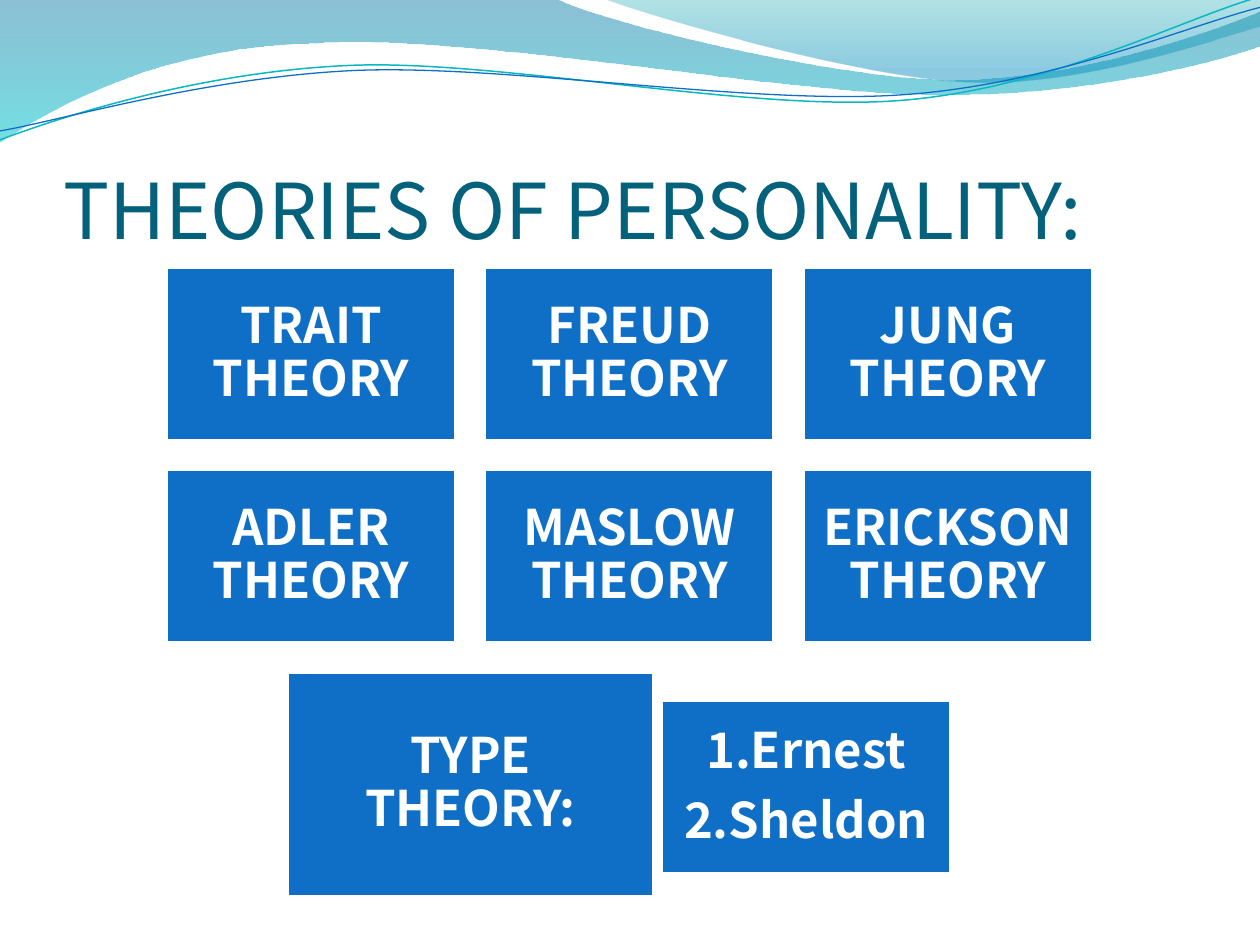
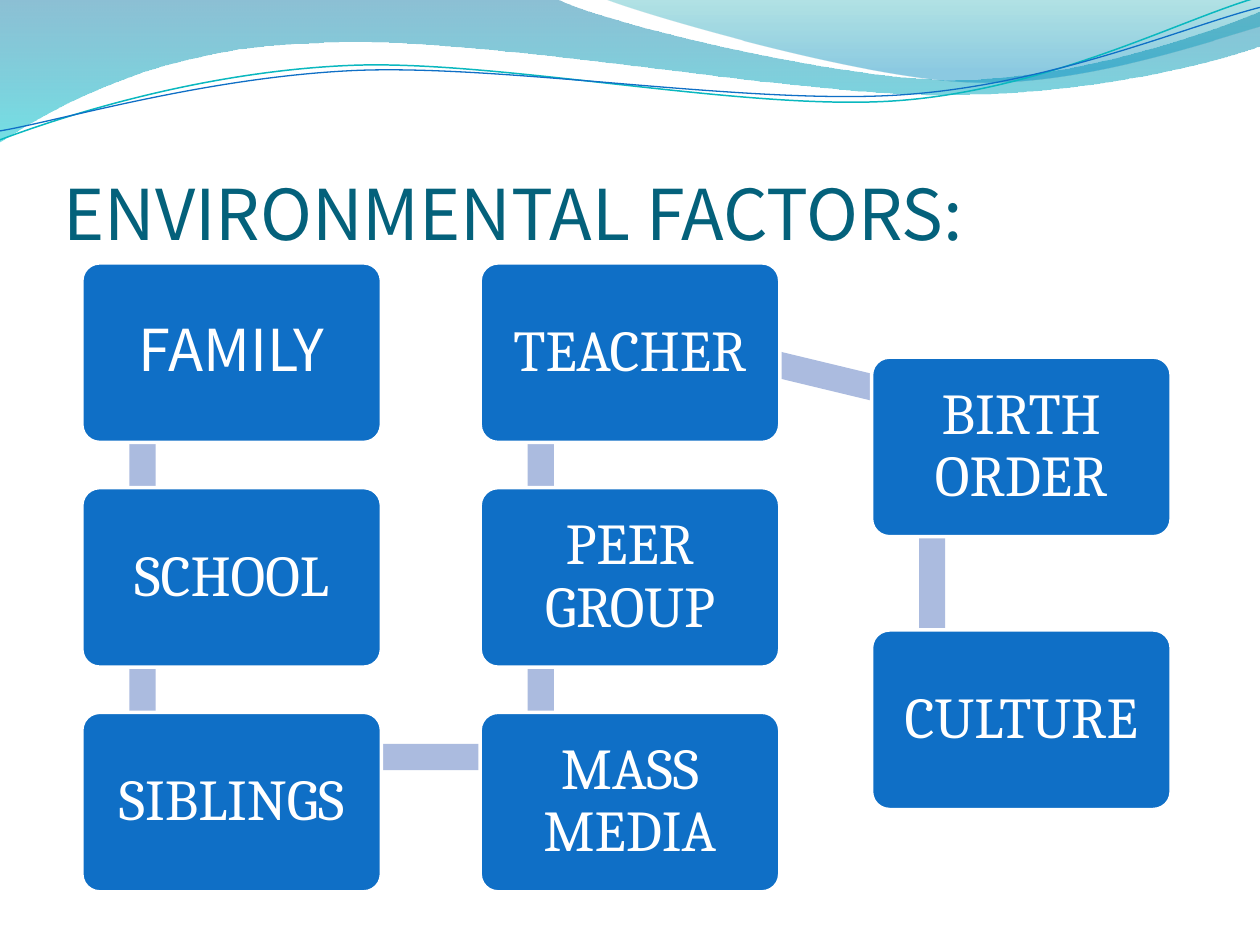
import math

import pptx
import pptx.dml.color
import pptx.enum.shapes
import pptx.enum.text
import pptx.oxml.ns
import pptx.util
from lxml import etree

Cm = pptx.util.Cm
Pt = pptx.util.Pt
ANCHOR = pptx.enum.text.MSO_ANCHOR
ALIGN = pptx.enum.text.PP_ALIGN
PRESET = pptx.enum.shapes.MSO_SHAPE
qn = pptx.oxml.ns.qn

SANS = "Noto Sans CJK KR"
SERIF = "Cambria"
WHITE = "FFFFFF"
BLUE = "0F6FC6"
TEAL = "0AB8BF"
TITLE_COLOR = "04617B"
LINK_COLOR = "ABBBDF"

BAND = [
    (0, 0), (11.2, -0.03),
    (12.09, 0.43, 16.87, 1.6, 19.25, 1.6),
    (21.67, 1.6, 24.33, 0.66, 25.4, 0.23),
    (25.43, 0.91),
    (24.97, 1.12, 22.1, 1.93, 18.95, 1.91),
    (15.8, 1.91, 9.7, 0.71, 6.53, 0.86),
    (3.25, 0.91, 1.17, 2.11, -0.03, 2.87),
]
CORNER = [
    (12.17, -0.03),
    (12.93, 0.28, 17.32, 1.57, 19.53, 1.65),
    (21.74, 1.75, 24.41, 0.81, 25.4, 0.53),
    (25.4, 0),
]
TEAL_WAVE = [
    (0, 2.82),
    (1.22, 2.36, 4.01, 1.45, 7.04, 1.32),
    (10.03, 1.19, 15.06, 2.26, 18.11, 2.03),
    (21.16, 1.8, 23.83, 0.38, 25.35, -0.05),
]
BLUE_WAVE = [
    (0, 2.64),
    (1.19, 2.44, 4.17, 1.55, 7.19, 1.42),
    (10.24, 1.3, 15.16, 2.13, 18.21, 1.91),
    (21.23, 1.7, 23.9, 0.53, 25.4, 0.15),
]

CARD_SIZE = (5.84, 3.5)
CARD_LEFT, CARD_TOP = 3.35, 5.38
CARD_PITCH_X, CARD_PITCH_Y = 6.42, 4.08
THEORISTS = ["TRAIT", "FREUD", "JUNG", "ADLER", "MASLOW", "ERICKSON"]

FACTOR_SIZE = (6.04, 3.62)
FACTOR_COLUMNS = [
    (1.65, 5.3, 4.53, ["FAMILY", "SCHOOL", "SIBLINGS"]),
    (9.68, 14.36, -4.53, ["MASS MEDIA", "PEER GROUP", "TEACHER"]),
    (17.57, 7.2, 5.5, ["BIRTH ORDER", "CULTURE"]),
]
LINK_OFFSET_X, LINK_OFFSET_Y = 1.22, 0.9
LINK_THICKNESS = 0.53


def color(hex_string):
    return pptx.dml.color.RGBColor.from_string(hex_string)


def bend_segments(shape, segments):
    lines = list(shape.element.spPr.iter(qn("a:lnTo")))
    for segment in segments[1:]:
        count = len(segment) // 2
        used, lines = lines[:count], lines[count:]
        if count == 3:
            curve = etree.Element(qn("a:cubicBezTo"))
            used[0].addprevious(curve)
            for line in used:
                curve.append(line[0])
                line.getparent().remove(line)


def add_outline(slide, segments, closed):
    points = [(Cm(segment[index]), Cm(segment[index + 1]))
              for segment in segments for index in range(0, len(segment), 2)]
    builder = slide.shapes.build_freeform(*points[0])
    builder.add_line_segments(points[1:], close=closed)
    shape = builder.convert_to_shape()
    shape.shadow.inherit = False
    bend_segments(shape, segments)
    return shape


def add_gradient_wave(slide, segments, stops):
    shape = add_outline(slide, segments, True)
    shape.line.fill.background()
    shape.fill.gradient()
    shape.fill.gradient_angle = 270
    for stop, (position, hex_string, _) in zip(shape.fill.gradient_stops, stops):
        stop.position = position
        stop.color.rgb = color(hex_string)
    color_elements = shape.element.spPr.iter(qn("a:srgbClr"))
    for element, (_, _, opacity) in zip(color_elements, stops):
        alpha = etree.SubElement(element, qn("a:alpha"))
        alpha.set("val", str(opacity * 1000))


def add_wave_line(slide, segments, hex_string, width):
    shape = add_outline(slide, segments, False)
    shape.fill.background()
    shape.line.color.rgb = color(hex_string)
    shape.line.width = Pt(width)


def add_run(paragraph, text, font, size, hex_string, bold=False):
    run = paragraph.add_run()
    run.text = text
    run.font.name = font
    run.font.size = Pt(size)
    run.font.bold = bold
    run.font.color.rgb = color(hex_string)


def set_frame(frame, anchor, left, top, right, bottom):
    frame.word_wrap = True
    frame.vertical_anchor = anchor
    frame.margin_left, frame.margin_top = Cm(left), Cm(top)
    frame.margin_right, frame.margin_bottom = Cm(right), Cm(bottom)


def add_titled_slide(presentation, title, size):
    slide = presentation.slides.add_slide(presentation.slide_layouts[6])
    add_gradient_wave(slide, BAND, [(0, "0074A1", 45), (1, "00C6CF", 55)])
    add_gradient_wave(slide, CORNER, [(0, "00A1A9", 30), (0.8, "008BBF", 45)])
    add_wave_line(slide, TEAL_WAVE, TEAL, 0.85)
    add_wave_line(slide, BLUE_WAVE, BLUE, 0.75)
    box = slide.shapes.add_textbox(Cm(1.28), Cm(1.96), Cm(22.86), Cm(3.18))
    set_frame(box.text_frame, ANCHOR.BOTTOM, 0, 0.13, 0, 0)
    add_run(box.text_frame.paragraphs[0], title, SANS, size, TITLE_COLOR)
    return slide


def add_block(slide, preset, left, top, size, fill):
    shape = slide.shapes.add_shape(preset, Cm(left), Cm(top), Cm(size[0]), Cm(size[1]))
    shape.shadow.inherit = False
    shape.fill.solid()
    shape.fill.fore_color.rgb = color(fill)
    shape.line.fill.background()
    return shape


def add_box(slide, preset, left, top, size, lines, font, points, inset, bold=False):
    shape = add_block(slide, preset, left, top, size, BLUE)
    shape.line.color.rgb = color(WHITE)
    shape.line.width = Pt(2)
    frame = shape.text_frame
    set_frame(frame, ANCHOR.MIDDLE, inset, inset, inset, inset)
    for index, line in enumerate(lines):
        paragraph = frame.add_paragraph() if index else frame.paragraphs[0]
        paragraph.alignment = ALIGN.CENTER
        paragraph.line_spacing = 0.9
        paragraph.space_after = Pt(points * 0.35)
        add_run(paragraph, line, font, points, WHITE, bold)
    return shape


def add_theory_card(slide, left, top, lines, size=CARD_SIZE):
    add_box(slide, PRESET.RECTANGLE, left, top, size, lines, SANS, 28, 0.3, True)


def add_factor(slide, left, top, name):
    font = SANS if name == "FAMILY" else SERIF
    shape = add_box(slide, PRESET.ROUNDED_RECTANGLE, left, top, FACTOR_SIZE,
                    [name], font, 33, 0.36)
    shape.adjustments[0] = 0.1


def add_link(slide, start, end):
    across, down = end[0] - start[0], end[1] - start[1]
    length = math.hypot(across, down)
    left = (start[0] + end[0] - length) / 2 + LINK_OFFSET_X
    top = (start[1] + end[1] - LINK_THICKNESS) / 2 + LINK_OFFSET_Y
    link = add_block(slide, PRESET.RECTANGLE, left, top,
                     (length, LINK_THICKNESS), LINK_COLOR)
    link.rotation = math.degrees(math.atan2(down, across)) % 360


def build_theories(presentation):
    slide = add_titled_slide(presentation, "THEORIES OF PERSONALITY:", 44)
    for index, theorist in enumerate(THEORISTS):
        row, column = divmod(index, 3)
        add_theory_card(slide, CARD_LEFT + column * CARD_PITCH_X,
                        CARD_TOP + row * CARD_PITCH_Y, [theorist + " THEORY"])
    add_theory_card(slide, 5.79, 13.55, ["TYPE THEORY:"], (7.39, 4.52))
    add_theory_card(slide, 13.33, 14.12, ["1.Ernest", "2.Sheldon"])


def build_factors(presentation):
    slide = add_titled_slide(presentation, "ENVIRONMENTAL FACTORS:", 40)
    factors = [(left, top + index * pitch, name)
               for left, top, pitch, names in FACTOR_COLUMNS
               for index, name in enumerate(names)]
    for start, end in zip(factors, factors[1:]):
        add_link(slide, start, end)
    for left, top, name in factors:
        add_factor(slide, left, top, name)


def main():
    presentation = pptx.Presentation()
    presentation.slide_width = Cm(25.4)
    presentation.slide_height = Cm(19.05)
    build_theories(presentation)
    build_factors(presentation)
    presentation.save("out.pptx")


if __name__ == "__main__":
    main()
